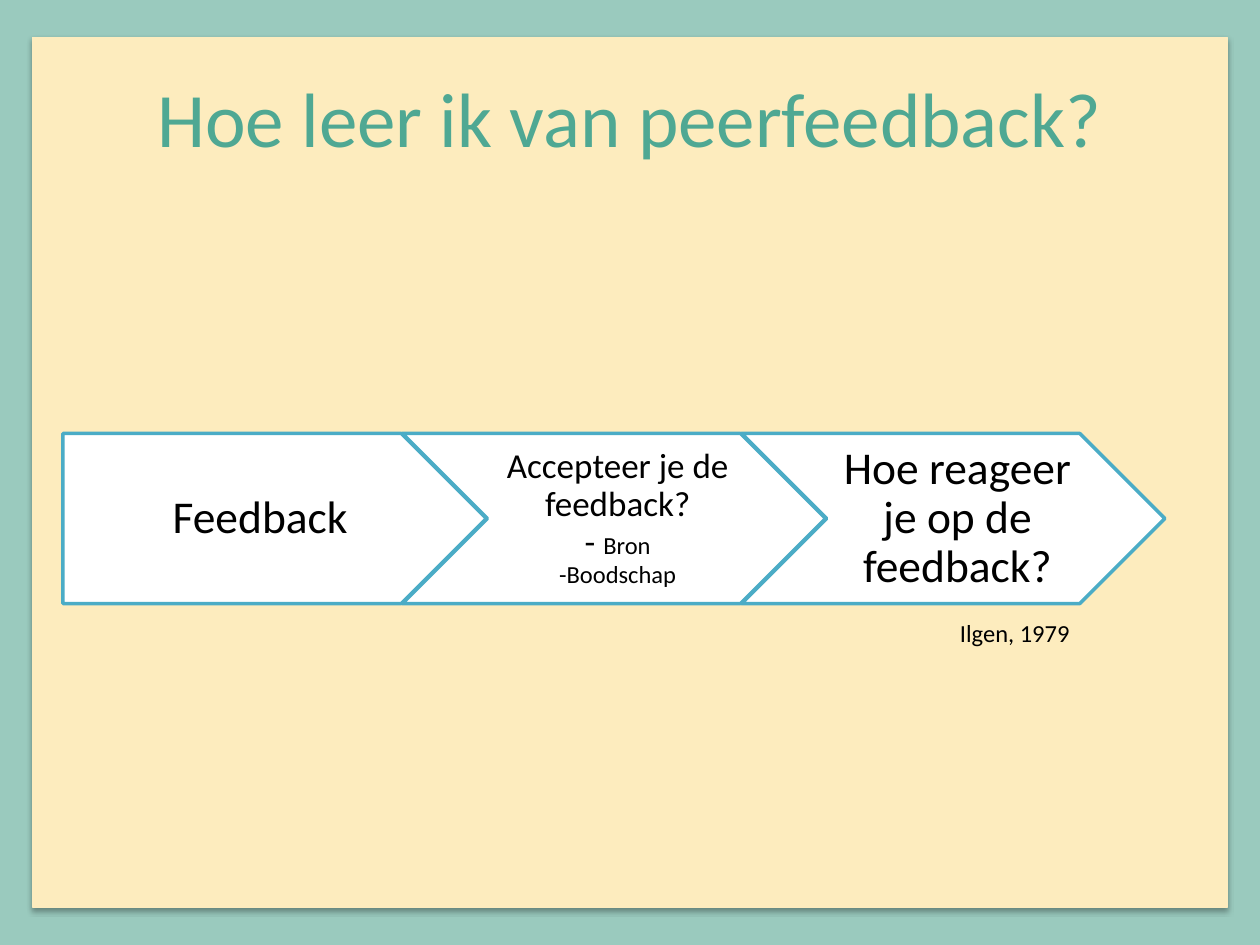
from lxml import etree
from pptx import Presentation
from pptx.dml.color import RGBColor
from pptx.enum.shapes import MSO_SHAPE
from pptx.enum.text import MSO_ANCHOR, PP_ALIGN
from pptx.oxml import parse_xml
from pptx.util import Inches, Pt

RECTANGLE = MSO_SHAPE.RECTANGLE
PENTAGON = MSO_SHAPE.PENTAGON
CHEVRON = MSO_SHAPE.CHEVRON
MIDDLE = MSO_ANCHOR.MIDDLE
CENTER = PP_ALIGN.CENTER

MINT = RGBColor(0x9A, 0xCA, 0xBE)
CREAM = RGBColor(0xFD, 0xEC, 0xBE)
GREEN = RGBColor(0x4F, 0xA8, 0x93)
BLUE = RGBColor(0x4B, 0xAC, 0xC6)
WHITE = RGBColor(0xFF, 0xFF, 0xFF)
BLACK = RGBColor(0x00, 0x00, 0x00)
FONT = "Calibri"

PANEL_SHADOW = (
    '<a:effectLst xmlns:a="http://schemas.openxmlformats.org/drawingml/2006/main">'
    '<a:outerShdw blurRad="39370" dist="22860" dir="5400000" rotWithShape="0">'
    '<a:srgbClr val="000000"><a:alpha val="35000"/></a:srgbClr>'
    '</a:outerShdw></a:effectLst>'
)


def add_box(shape_type, left, top, width, height, fill, line, line_width):
    shape = slide.shapes.add_shape(
        shape_type, Inches(left), Inches(top), Inches(width), Inches(height))
    shape.shadow.inherit = False
    shape.fill.solid()
    shape.fill.fore_color.rgb = fill
    shape.line.color.rgb = line
    shape.line.width = Pt(line_width)
    return shape


def add_label(left, top, width, height, text, size, color):
    box = slide.shapes.add_textbox(
        Inches(left), Inches(top), Inches(width), Inches(height))
    box.text_frame.word_wrap = True
    paragraph = box.text_frame.paragraphs[0]
    paragraph.text = text
    paragraph.font.name = FONT
    paragraph.font.size = Pt(size)
    paragraph.font.color.rgb = color
    return box


presentation = Presentation()
presentation.slide_width = Inches(10)
presentation.slide_height = Inches(7.5)
slide = presentation.slides.add_slide(presentation.slide_layouts[6])

# Background and panel
slide.background.fill.solid()
slide.background.fill.fore_color.rgb = MINT
panel = add_box(RECTANGLE, 0.26, 0.3, 9.48, 6.9, CREAM, CREAM, 0.75)
panel_properties = panel.fill._xPr
panel_properties.replace(
    panel_properties.find("{*}effectLst"), parse_xml(PANEL_SHADOW))

# Title
title = add_label(0.5, 0.3, 9, 1.25, "Hoe leer ik van peerfeedback?", 44, GREEN)
title.text_frame.vertical_anchor = MIDDLE
title.text_frame.paragraphs[0].alignment = CENTER

# Process steps: shape, margins (left, right, top and bottom), lines of (text, size) runs
STEPS = [
    (PENTAGON, (0.15, 0.04, 0.08), [[("Feedback", 26)]]),
    (CHEVRON, (0.09, 0.03, 0.06), [
        [("Accepteer je de feedback?", 20)],
        [("- ", 20), ("Bron", 14)],
        [("-Boodschap", 14)],
    ]),
    (CHEVRON, (0.11, 0.04, 0.08), [[("Hoe reageer je op de feedback?", 26)]]),
]
STEP_LEFT, STEP_TOP, STEP_WIDTH, STEP_HEIGHT = 0.5, 3.44, 3.36, 1.35
STEP_PITCH = STEP_WIDTH * 0.8 + 0.005

for index, (shape_type, margins, lines) in enumerate(STEPS):
    step = add_box(shape_type, STEP_LEFT + index * STEP_PITCH, STEP_TOP,
                   STEP_WIDTH, STEP_HEIGHT, WHITE, BLUE, 2)
    frame = step.text_frame
    frame.word_wrap = True
    frame.vertical_anchor = MIDDLE
    frame.margin_left, frame.margin_right = Inches(margins[0]), Inches(margins[1])
    frame.margin_top = frame.margin_bottom = Inches(margins[2])
    paragraph = frame.paragraphs[0]
    paragraph.alignment = CENTER
    paragraph.line_spacing = 0.9
    paragraph.font.name = FONT
    paragraph.font.color.rgb = BLACK
    for number, line in enumerate(lines):
        if number:
            paragraph.add_line_break()
        for text, size in line:
            run = paragraph.add_run()
            run.text = text
            run.font.size = Pt(size)
            run.font.color.rgb = BLACK

# Reference
add_label(7.52, 4.86, 1.98, 0.34, "Ilgen, 1979", 14, BLACK)

presentation.save("out.pptx")
